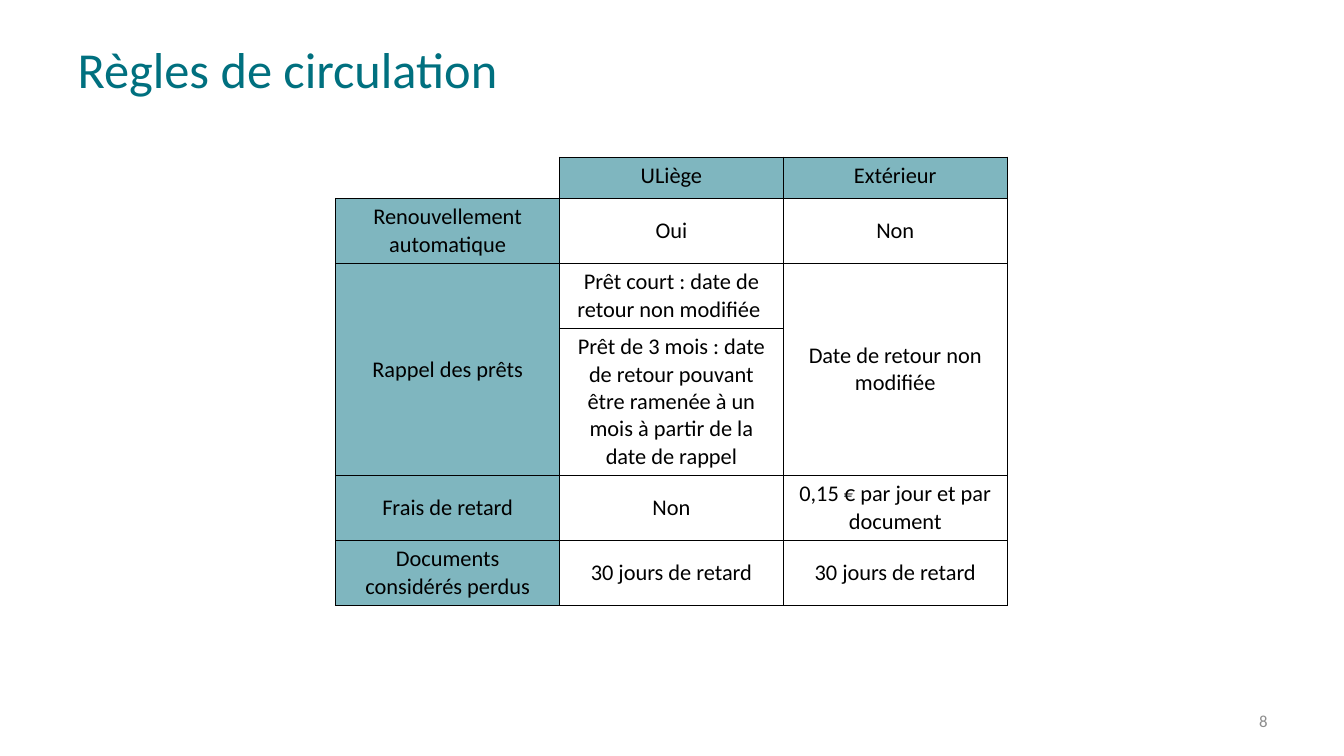
import pptx
import pptx.util
import pptx.dml.color
import pptx.enum.text
import pptx.oxml
import pptx.oxml.ns

Inches = pptx.util.Inches
Pt = pptx.util.Pt
RGBColor = pptx.dml.color.RGBColor
ALIGN = pptx.enum.text.PP_ALIGN
ANCHOR = pptx.enum.text.MSO_ANCHOR

TITLE = "Règles de circulation"
PAGE_NUMBER = "8"
RULES = [
    ("", "ULiège", "Extérieur"),
    ("Renouvellement automatique", "Oui", "Non"),
    ("Rappel des prêts", "Prêt court : date de retour non modifiée ",
     "Date de retour non modifiée"),
    ("", "Prêt de 3 mois : date de retour pouvant être ramenée à un mois "
     "à partir de la date de rappel", ""),
    ("Frais de retard", "Non", "0,15 € par jour et par document"),
    ("Documents considérés perdus", "30 jours de retard", "30 jours de retard"),
]
ROW_HEIGHTS = [0.41, 0.64, 0.64, 1.45, 0.64, 0.64]
COLUMN_WIDTH = 2.22
RECALL_ROWS = (2, 3)
MERGED_COLUMNS = (0, 2)

TEAL = RGBColor(0x00, 0x70, 0x7F)
LIGHT_TEAL = RGBColor(0x7F, 0xB6, 0xBF)
BLACK = RGBColor(0x00, 0x00, 0x00)
GREY = RGBColor(0x8C, 0x8C, 0x8C)
FONT = "Calibri"


def write(frame, text, size, color, align):
    para = frame.paragraphs[0]
    para.alignment = align
    span = para.add_run()
    span.text = text
    span.font.name = FONT
    span.font.size = Pt(size)
    span.font.color.rgb = color


def set_borders(cell, hidden=()):
    """Draw 1 pt black lines on the four sides, except the hidden ones."""
    properties = cell._tc.get_or_add_tcPr()
    namespace = pptx.oxml.ns.nsdecls("a")
    for place, side in enumerate("LRTB"):
        paint = ("<a:noFill/>" if side in hidden else
                 f'<a:solidFill><a:srgbClr val="{BLACK}"/></a:solidFill>')
        properties.insert(place, pptx.oxml.parse_xml(
            f'<a:ln{side} {namespace} w="{Pt(1)}">{paint}</a:ln{side}>'))


def add_rules_table(page):
    columns = len(RULES[0])
    table = page.shapes.add_table(
        len(RULES), columns, Inches(3.33), Inches(1.56),
        Inches(columns * COLUMN_WIDTH), Inches(sum(ROW_HEIGHTS))).table
    table.first_row = False
    table.horz_banding = False
    for column in table.columns:
        column.width = Inches(COLUMN_WIDTH)
    for row, height in zip(table.rows, ROW_HEIGHTS):
        row.height = Inches(height)

    for r, texts in enumerate(RULES):
        for c, text in enumerate(texts):
            cell = table.cell(r, c)
            is_corner = r == 0 and c == 0
            if (r == 0 or c == 0) and not is_corner:
                cell.fill.solid()
                cell.fill.fore_color.rgb = LIGHT_TEAL
            else:
                cell.fill.background()
            set_borders(cell, hidden="LT" if is_corner else "")
            cell.vertical_anchor = ANCHOR.TOP if r == 0 else ANCHOR.MIDDLE
            if text:
                write(cell.text_frame, text, 16, BLACK, ALIGN.CENTER)

    first, last = RECALL_ROWS
    for c in MERGED_COLUMNS:
        table.cell(first, c).merge(table.cell(last, c))


def main():
    deck = pptx.Presentation()
    deck.slide_width, deck.slide_height = Inches(13.33), Inches(7.5)
    page = deck.slides.add_slide(deck.slide_layouts[5])

    title = page.shapes.title
    title.left, title.top = Inches(0.67), Inches(0.34)
    title.width, title.height = Inches(12), Inches(0.68)
    title.text_frame.vertical_anchor = ANCHOR.MIDDLE
    write(title.text_frame, TITLE, 36, TEAL, ALIGN.LEFT)

    add_rules_table(page)

    number = page.shapes.add_textbox(
        Inches(9.56), Inches(6.95), Inches(3.11), Inches(0.4)).text_frame
    number.word_wrap = True
    number.vertical_anchor = ANCHOR.MIDDLE
    write(number, PAGE_NUMBER, 12, GREY, ALIGN.RIGHT)

    deck.save("out.pptx")


if __name__ == "__main__":
    main()
